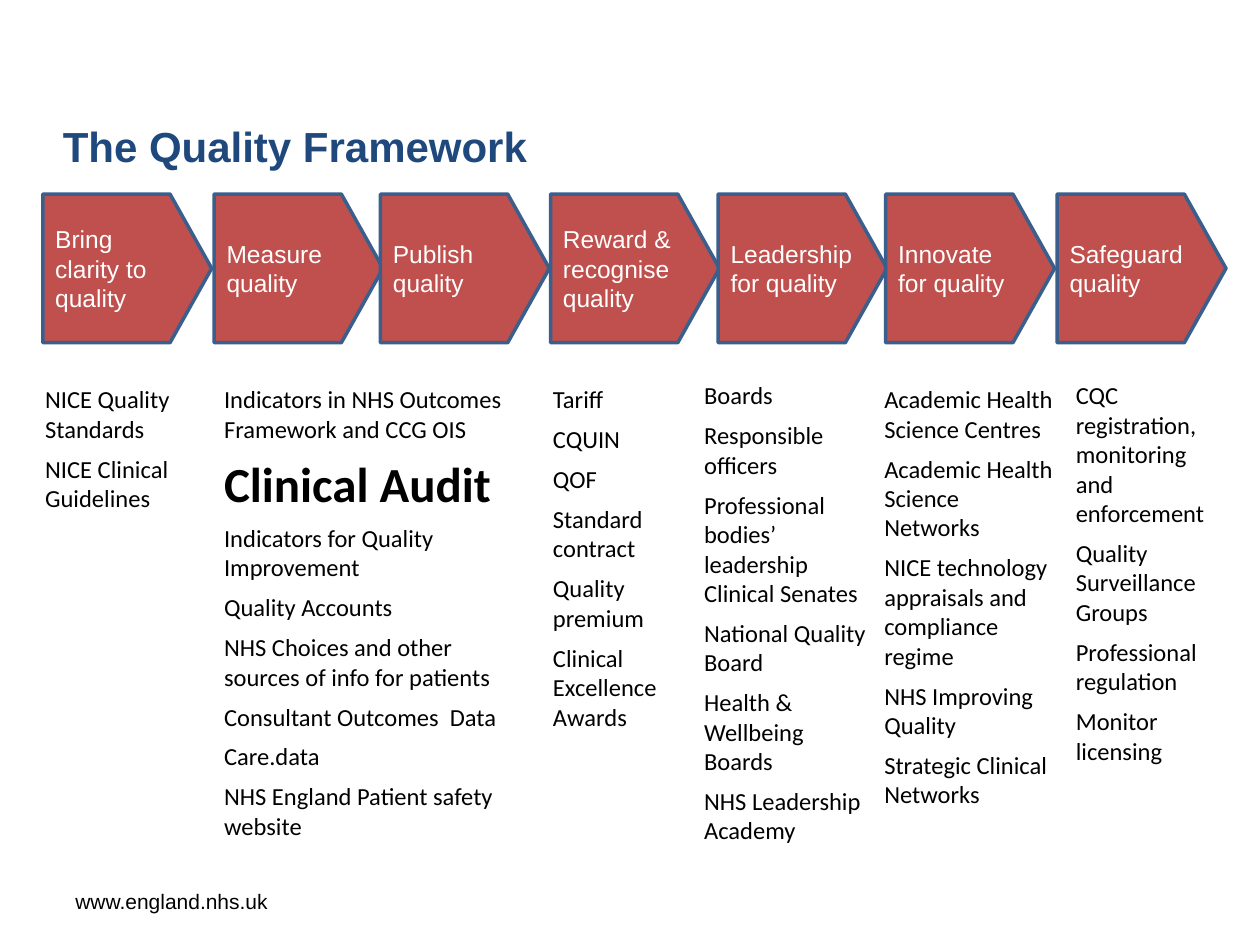
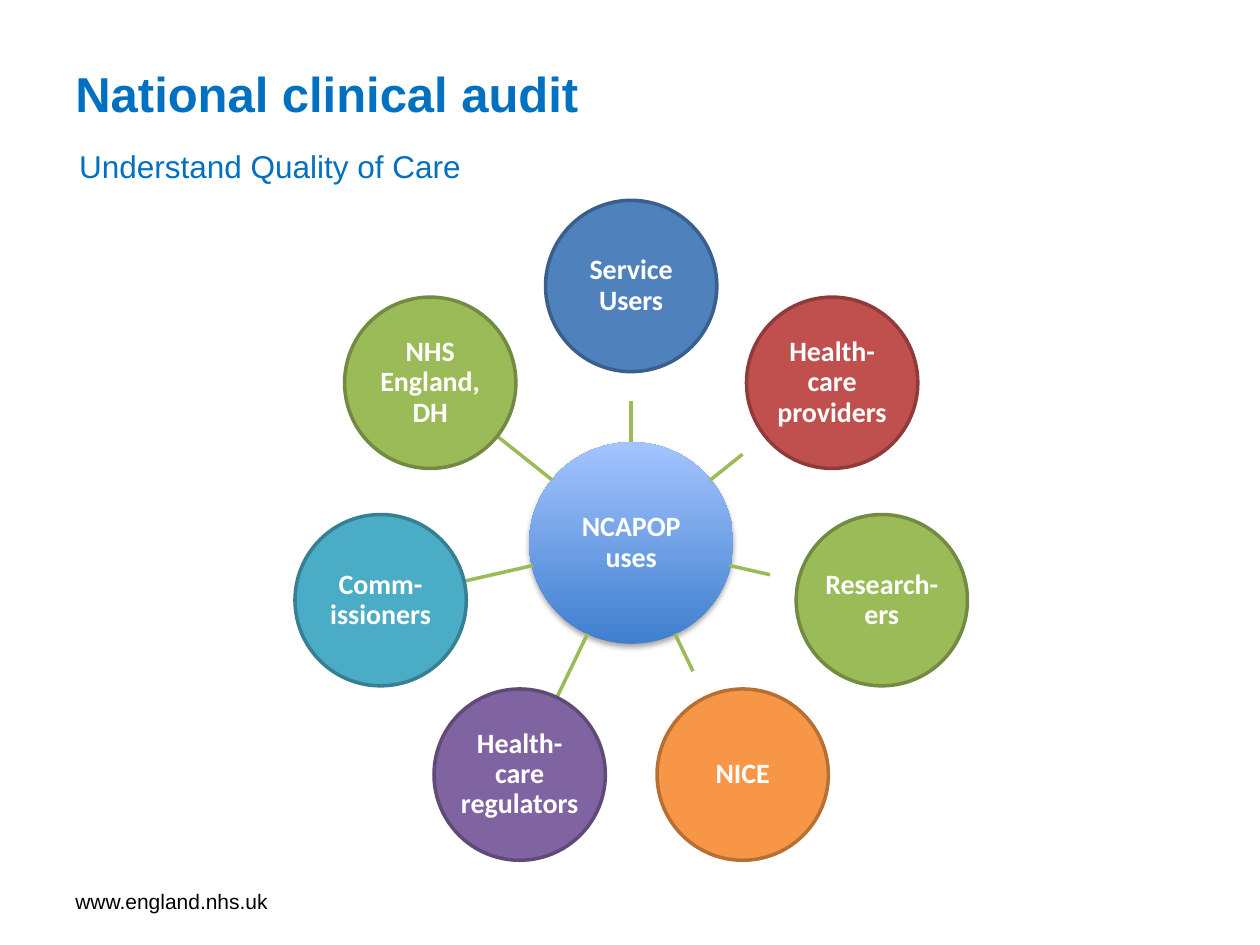
import dataclasses
import math

import lxml.etree
import pptx
import pptx.dml.color
import pptx.enum.shapes
import pptx.enum.text
import pptx.oxml.ns
import pptx.util

SHAPE = pptx.enum.shapes.MSO_SHAPE
ANCHOR = pptx.enum.text.MSO_ANCHOR
ALIGN = pptx.enum.text.PP_ALIGN
PX = 9144  # EMU in one px, 100 px to the inch


@dataclasses.dataclass(frozen=True)
class Type:
    font: str
    size: int
    color: str
    bold: bool = False


@dataclasses.dataclass(frozen=True)
class Theme:
    # Colours
    blue: tuple = ("4F81BD", "3A5F8C")
    red: tuple = ("C0504D", "8E3B39")
    green: tuple = ("9BBB59", "738A42")
    orange: tuple = ("F79646", "B76F34")
    purple: tuple = ("8064A2", "5F4A78")
    aqua: tuple = ("4BACC6", "377F92")
    step: tuple = ("C0504D", "3A5F8C")
    hub: tuple = ("3F7FCE", "A4C4FF")
    spoke: str = "9BBB59"
    line: int = 2
    # Type
    foot: Type = Type("Arial", 12, "000000")
    head: Type = Type("Arial", 24, "1F497D", True)
    title: Type = Type("Arial", 28, "0070C0", True)
    sub: Type = Type("Arial", 18, "0070C0")
    label: Type = Type("Arial", 14, "FFFFFF")
    body: Type = Type("Calibri", 14, "000000")
    loud: Type = Type("Calibri", 28, "000000", True)
    node: Type = Type("Calibri", 16, "FFFFFF", True)


def rgb(code):
    return pptx.dml.color.RGBColor.from_string(code)


def emu(*nums):
    return [pptx.util.Emu(round(n * PX)) for n in nums]


class Deck:
    def __init__(self, theme):
        self.theme = theme
        self.prs = pptx.Presentation()
        self.prs.slide_width, self.prs.slide_height = emu(1000, 750)
        self.slide = None

    def page(self):
        self.slide = self.prs.slides.add_slide(self.prs.slide_layouts[6])
        self.text((50, 695, 233, 40), ["www.england.nhs.uk"], self.theme.foot, ANCHOR.MIDDLE)

    def fill(self, frame, items, style, align=ALIGN.LEFT, gap=0, lead=None):
        """Fill a frame; an item is a string or a (string, Type) pair."""
        frame.word_wrap = True
        for i, item in enumerate(items):
            words, kind = (item, style) if isinstance(item, str) else item
            para = frame.paragraphs[0] if i == 0 else frame.add_paragraph()
            para.alignment = align
            if lead:
                para.line_spacing = lead
            if i and gap:
                para.space_before = pptx.util.Pt(gap)
            run = para.add_run()
            run.text = words
            run.font.name = kind.font
            run.font.size = pptx.util.Pt(kind.size)
            run.font.bold = kind.bold
            run.font.color.rgb = rgb(kind.color)

    def text(self, box, items, style, anchor=ANCHOR.TOP, gap=0):
        frame = self.slide.shapes.add_textbox(*emu(*box)).text_frame
        frame.vertical_anchor = anchor
        self.fill(frame, items, style, gap=gap)

    def shape(self, kind, box, pair=None):
        item = self.slide.shapes.add_shape(kind, *emu(*box))
        item.shadow.inherit = False
        item.text_frame.vertical_anchor = ANCHOR.MIDDLE
        if pair:
            item.fill.solid()
            item.fill.fore_color.rgb = rgb(pair[0])
            item.line.color.rgb = rgb(pair[1])
            item.line.width = pptx.util.Pt(self.theme.line)
        return item

    def step(self, box, words):
        item = self.shape(SHAPE.PENTAGON, box, self.theme.step)
        item.adjustments[0] = 0.28
        self.fill(item.text_frame, [words], self.theme.label)

    def disc(self, mid, size, words, pair=None):
        (x, y), (w, h) = mid, size
        item = self.shape(SHAPE.OVAL, (x - w / 2, y - h / 2, w, h), pair)
        frame = item.text_frame
        frame.margin_left = frame.margin_right = 0
        frame.margin_top = frame.margin_bottom = emu(1)[0]
        self.fill(frame, [words], self.theme.node, ALIGN.CENTER, lead=0.9)
        return item

    def hub(self, mid, size, words):
        item = self.disc(mid, size, words)
        item.line.fill.background()
        item.fill.gradient()
        item.fill.gradient_angle = 90
        for stop, code in zip(item.fill.gradient_stops, self.theme.hub):
            stop.color.rgb = rgb(code)
        # Soft shadow below the hub
        qn = pptx.oxml.ns.qn
        glow = lxml.etree.SubElement(
            item.element.spPr.find(qn("a:effectLst")), qn("a:outerShdw"),
            blurRad="40000", dist="23000", dir="5400000", rotWithShape="0")
        tint = lxml.etree.SubElement(glow, qn("a:srgbClr"), val="000000")
        lxml.etree.SubElement(tint, qn("a:alpha"), val="35000")

    def spoke(self, start, end):
        kind = pptx.enum.shapes.MSO_CONNECTOR.STRAIGHT
        item = self.slide.shapes.add_connector(kind, *emu(*start, *end))
        item.line.color.rgb = rgb(self.theme.spoke)
        item.line.width = pptx.util.Pt(self.theme.line)
        lxml.etree.SubElement(item.element.spPr, pptx.oxml.ns.qn("a:effectLst"))


def quality(deck):
    theme = deck.theme
    deck.page()
    deck.text((40, 96, 922, 40), ["The Quality Framework"], theme.head, ANCHOR.MIDDLE)

    # Chain of steps
    steps = [
        (34, "Bring clarity to quality"), (170, "Measure quality"),
        (302, "Publish quality"), (437, "Reward & recognise quality"),
        (570, "Leadership for quality"), (703, "Innovate for quality"),
        (839, "Safeguard quality"),
    ]
    for left, words in steps:
        deck.step((left, 154, 134, 118), words)

    # Lists below the steps
    lists = [
        ((26, 300, 142, 113), ["NICE Quality Standards", "NICE Clinical Guidelines"]),
        ((168, 300, 252, 375), [
            "Indicators in NHS Outcomes Framework and CCG OIS",
            ("Clinical Audit", theme.loud),
            "Indicators for Quality Improvement",
            "Quality Accounts",
            "NHS Choices and other sources of info for patients",
            "Consultant Outcomes  Data",
            "Care.data",
            "NHS England Patient safety website"]),
        ((429, 300, 142, 288), [
            "Tariff", "CQUIN", "QOF", "Standard contract", "Quality premium",
            "Clinical Excellence Awards"]),
        ((549, 297, 157, 382), [
            "Boards",
            "Responsible officers",
            "Professional bodies’ leadership Clinical Senates",
            "National Quality Board",
            "Health & Wellbeing Boards",
            "NHS Leadership Academy"]),
        ((692, 300, 157, 399), [
            "Academic Health Science Centres",
            "Academic Health Science Networks",
            "NICE technology appraisals and compliance regime",
            "NHS Improving Quality",
            "Strategic Clinical Networks"]),
        ((844, 297, 134, 318), [
            "CQC registration, monitoring and enforcement",
            "Quality Surveillance Groups",
            "Professional regulation",
            "Monitor licensing"]),
    ]
    for box, items in lists:
        deck.text(box, items, theme.body, gap=6)


def audit(deck):
    theme = deck.theme
    deck.page()
    deck.text((50, 37, 805, 73), ["National clinical audit"], theme.title, ANCHOR.MIDDLE)
    deck.text((53, 112, 365, 40), ["Understand Quality of Care"], theme.sub)

    # Hub with a ring of users; each has the reach of its spoke
    mid = (501, 431)
    short, long = 113, 136
    users = [
        ("Service Users", theme.blue, short),
        ("Health-care providers", theme.red, short),
        ("Research-ers", theme.green, short),
        ("NICE", theme.orange, short),
        ("Health-care regulators", theme.purple, long),
        ("Comm-issioners", theme.aqua, long),
        ("NHS England, DH", theme.green, long),
    ]

    def polar(turn, reach):
        return mid[0] + reach * math.sin(turn), mid[1] - reach * math.cos(turn)

    deck.hub(mid, (162, 160), "NCAPOP uses")
    for i, (words, pair, reach) in enumerate(users):
        turn = math.tau * i / len(users)
        deck.spoke(polar(turn, 80), polar(turn, reach))
        deck.disc(polar(turn, 204), (136, 136), words, pair)


def main():
    deck = Deck(Theme())
    quality(deck)
    audit(deck)
    deck.prs.save("out.pptx")


if __name__ == "__main__":
    main()
